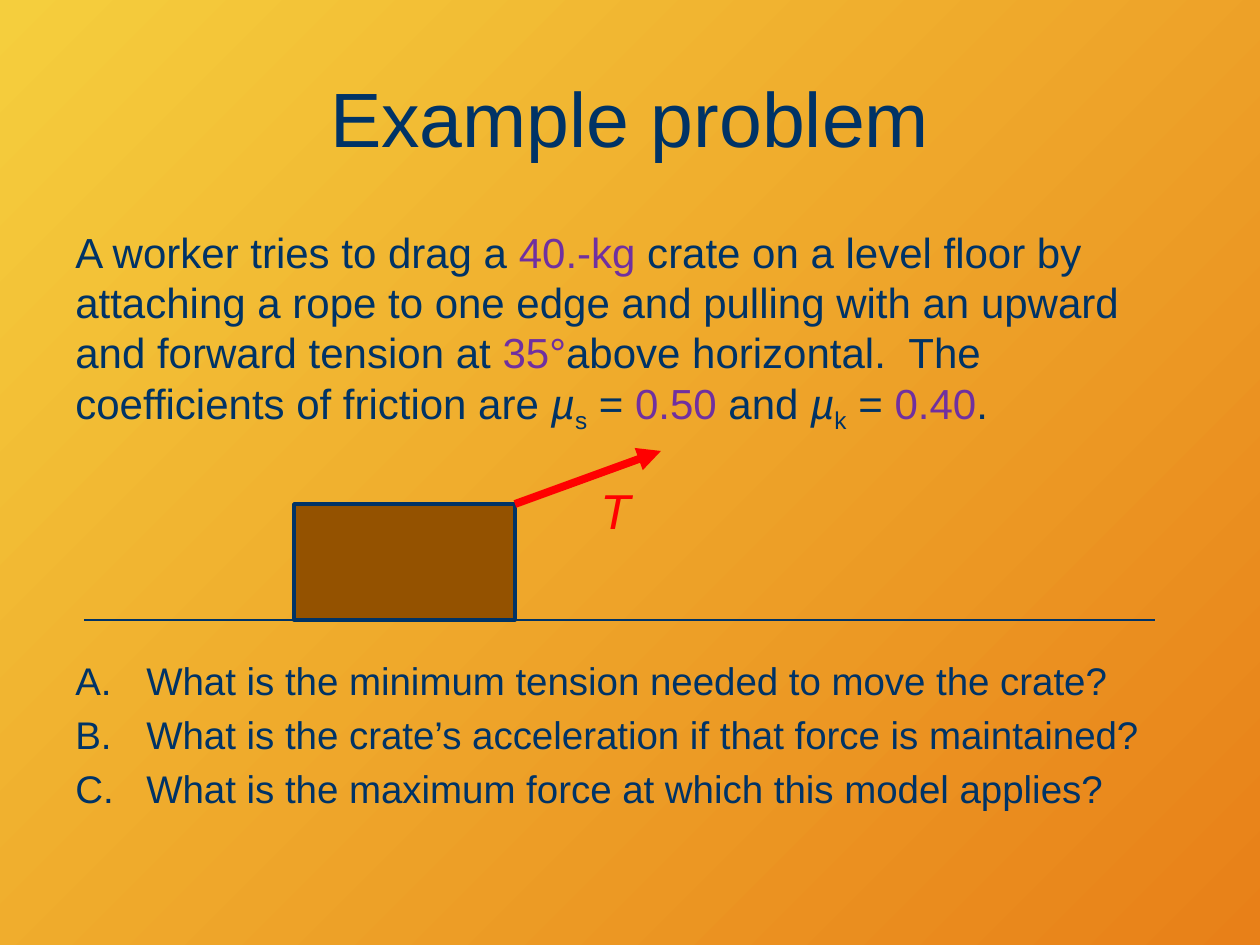
from lxml.etree import SubElement
from pptx import Presentation
from pptx.dml.color import RGBColor
from pptx.enum.shapes import MSO_CONNECTOR as Connector, MSO_SHAPE as Shape
from pptx.enum.text import MSO_ANCHOR as Anchor, PP_ALIGN as Align
from pptx.oxml.ns import qn
from pptx.util import Pt

SCALE = 914400 / 126


def px(length):
    """Turn whole pixels into EMU."""
    return round(length * SCALE)


def color(value):
    """Turn a hex string into a colour."""
    return RGBColor.from_string(value)


class SlideBuilder:
    """Holds the style and the current slide."""

    font = "Arial"
    navy, purple, red, brown = "003366", "7030A0", "FF0000", "945200"

    def __init__(self, presentation):
        """Add a blank slide to the presentation."""
        self.slide = presentation.slides.add_slide(presentation.slide_layouts[6])

    def background(self, start, end):
        """Fill the background with a diagonal gradient."""
        fill = self.slide.background.fill
        fill.gradient()
        fill.gradient_angle = 315
        for stop, value, position in zip(fill.gradient_stops, (start, end), (0, 1)):
            stop.color.rgb = color(value)
            stop.position = position

    def text(self, box, paragraphs, size, align=Align.LEFT, anchor=Anchor.TOP,
             spaced=False, lettered=False):
        """Add a text box; each run is (text, colour, style)."""
        frame = self.slide.shapes.add_textbox(*map(px, box)).text_frame
        frame.word_wrap = True
        frame.vertical_anchor = anchor
        for index, runs in enumerate(paragraphs):
            paragraph = frame.add_paragraph() if index else frame.paragraphs[0]
            paragraph.alignment = align
            properties = paragraph._p.get_or_add_pPr()
            if spaced:
                spacing = SubElement(properties, qn("a:spcBef"))
                SubElement(spacing, qn("a:spcPct"), val="20000")
            if lettered:
                properties.set("marL", str(px(71)))
                properties.set("indent", str(-px(71)))
                SubElement(properties, qn("a:buFont"), typeface="+mj-lt")
                SubElement(properties, qn("a:buAutoNum"), type="alphaUcPeriod")
            for words, value, style in runs:
                self.run(paragraph, words, size, value, style)

    def run(self, paragraph, words, size, value, style):
        """Add one run, plain, italic or subscript."""
        run = paragraph.add_run()
        run.text = words
        run.font.name = self.font
        run.font.size = Pt(size)
        run.font.color.rgb = color(value)
        if style == "italic":
            run.font.italic = True
        elif style == "subscript":
            run._r.get_or_add_rPr().set("baseline", "-25000")

    def rectangle(self, box, fill, line, width):
        """Add an outlined rectangle."""
        shape = self.slide.shapes.add_shape(Shape.RECTANGLE, *map(px, box))
        shape.shadow.inherit = False
        shape.fill.solid()
        shape.fill.fore_color.rgb = color(fill)
        shape.line.color.rgb = color(line)
        shape.line.width = Pt(width)

    def line(self, start, end, value, width, arrow=False):
        """Add a straight line, with an arrowhead at its end if wanted."""
        connector = self.slide.shapes.add_connector(
            Connector.STRAIGHT, *map(px, start + end))
        connector.line.color.rgb = color(value)
        connector.line.width = Pt(width)
        if arrow:
            SubElement(connector.line._get_or_add_ln(), qn("a:tailEnd"), type="triangle")
        SubElement(connector._element.spPr, qn("a:effectLst"))


def main():
    """Build the example problem slide."""
    presentation = Presentation()
    presentation.slide_width, presentation.slide_height = px(1260), px(945)
    builder = SlideBuilder(presentation)
    navy, purple, red = builder.navy, builder.purple, builder.red
    left, width = 63, 1134

    builder.background("F5CE3D", "E88018")
    builder.text((left, 38, width, 158), [[("Example problem", navy, "")]], 44,
                 align=Align.CENTER, anchor=Anchor.MIDDLE)
    problem = [
        ("A worker tries to drag a ", navy, ""),
        ("40.-kg", purple, ""),
        (" crate on a level floor by attaching a rope to one edge and pulling "
         "with an upward and forward tension at ", navy, ""),
        ("35°", purple, ""),
        ("above horizontal.  The coefficients of friction are ", navy, ""),
        ("µ", navy, "italic"),
        ("s", navy, "subscript"),
        (" = ", navy, ""),
        ("0.50", purple, ""),
        (" and ", navy, ""),
        ("µ", navy, "italic"),
        ("k", navy, "subscript"),
        (" = ", navy, ""),
        ("0.40", purple, ""),
        (".", navy, ""),
    ]
    builder.text((left, 220, width, 305), [problem], 24, spaced=True)

    floor, crate_left, crate_top, crate_width = 620, 294, 504, 221
    corner = (crate_left + crate_width, crate_top)
    builder.line((84, floor), (1155, floor), navy, 1.5)
    builder.rectangle((crate_left, crate_top, crate_width, floor - crate_top),
                      builder.brown, navy, 2)
    builder.line(corner, (661, 451), red, 4.5, arrow=True)
    builder.text((588, 474, 73, 72), [[("T", red, "italic")]], 28)

    questions = [
        "What is the minimum tension needed to move the crate?",
        "What is the crate’s acceleration if that force is maintained?",
        "What is the maximum force at which this model applies?",
    ]
    builder.text((left, 651, width, 199),
                 [[(question, navy, "")] for question in questions], 22,
                 spaced=True, lettered=True)
    presentation.save("out.pptx")


if __name__ == "__main__":
    main()
